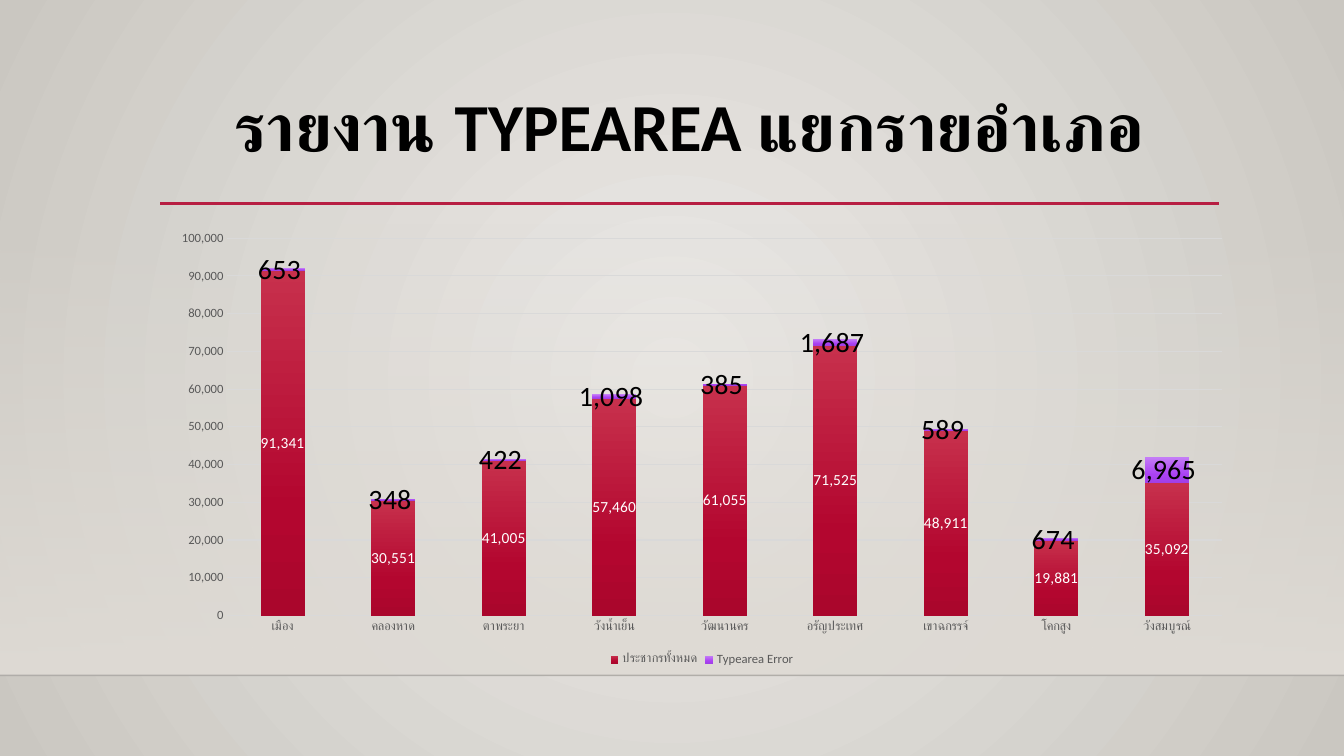
from lxml import etree
from pptx import Presentation
from pptx import util as u
from pptx.chart.data import CategoryChartData
from pptx.dml.color import RGBColor
from pptx.enum import chart as ch, shapes, text
from pptx.oxml.ns import qn

Pt = u.Pt
FONT = "Calibri"
WIDE, HIGH = 960, 540
TITLE = "รายงาน TYPEAREA แยกรายอำเภอ"
AREAS = ["เมือง", "คลองหาด", "ตาพระยา", "วังน้ำเย็น", "วัฒนานคร",
         "อรัญประเทศ", "เขาฉกรรจ์", "โคกสูง", "วังสมบูรณ์"]
# name, values, gradient stops, label size, label colour, label format
SERIES = [
    ("ประชากรทั้งหมด",
     [91341, 30551, 41005, 57460, 61055, 71525, 48911, 19881, 35092],
     [(0, "C7304C"), (69, "B3062F"), (100, "AA062C")],
     11, "FFFFFF", "#,##0"),
    ("Typearea Error",
     [653, 348, 422, 1098, 385, 1687, 589, 674, 6965],
     [(0, "C57FF7"), (69, "AA41F3"), (100, "A13FE5")],
     20, "000000", r"#,##0_);\(#,##0\)"),
]
LEFT, FLOOR = 114.5, 482.4


def rgb(code):
    return RGBColor.from_string(code)


def style(font, size, code, bold=False):
    font.name, font.size, font.bold = FONT, Pt(size), bold
    font.color.rgb = rgb(code)


def add(node, tag, **attrs):
    return etree.SubElement(node, qn(tag), {k: str(v) for k, v in attrs.items()})


def blend(fill, root, stops, radial=False):
    """Fill with a gradient; a stop is (percent, colour[, opacity percent])."""
    fill.solid()
    fill.fore_color.rgb = rgb(stops[0][1])
    solid = next(root.iter(qn("a:solidFill")))
    grad = etree.Element(qn("a:gradFill"), rotWithShape="1")
    marks = add(grad, "a:gsLst")
    for place, code, *alpha in stops:
        mark = add(marks, "a:gs", pos=place * 1000)
        tint = add(mark, "a:srgbClr", val=code)
        if alpha:
            add(tint, "a:alpha", val=alpha[0] * 1000)
    if radial:
        way = add(grad, "a:path", path="circle")
        add(way, "a:fillToRect", l=50000, t=50000, r=50000, b=50000)
    else:
        add(grad, "a:lin", ang=5400000, scaled=0)
    solid.getparent().replace(solid, grad)


def rule(slide, left, right, top, code, width, alpha=None):
    line = slide.shapes.add_connector(
        shapes.MSO_CONNECTOR.STRAIGHT, Pt(left), Pt(top), Pt(right), Pt(top))
    line.line.color.rgb = rgb(code)
    line.line.width = Pt(width)
    props = line.element.spPr
    add(props, "a:effectLst")
    if alpha:
        add(next(props.iter(qn("a:srgbClr"))), "a:alpha", val=alpha * 1000)


def draw_base(slide):
    blend(slide.background.fill, slide.element.find(".//" + qn("p:bgPr")),
          [(0, "ECEAE7"), (100, "CAC7C1")], radial=True)
    top = 159
    wall = slide.shapes.add_shape(
        shapes.MSO_SHAPE.RECTANGLE, 0, Pt(top), Pt(WIDE), Pt(FLOOR - top))
    wall.shadow.inherit = False
    wall.line.fill.background()
    blend(wall.fill, wall.element.spPr, [(0, "DFDBD5", 0), (100, "DFDBD5", 100)])
    rule(slide, 0, WIDE, FLOOR, "000001", 1, 20)
    rule(slide, LEFT, 871, 145.4, "B71E42", 2.5)


def draw_title(slide):
    title = slide.shapes.title
    title.left, title.top, title.width, title.height = map(Pt, (LEFT, 63.4, 756, 82.8))
    frame = title.text_frame
    frame.text = TITLE
    frame.word_wrap = True
    frame.vertical_anchor = text.MSO_ANCHOR.TOP
    para = frame.paragraphs[0]
    para.alignment = text.PP_ALIGN.CENTER
    para.line_spacing = 0.9
    style(para.runs[0].font, 48, "000000", True)


def draw_chart(slide):
    data = CategoryChartData(number_format="#,##0")
    data.categories = AREAS
    for name, values, *_ in SERIES:
        data.add_series(name, values)
    chart = slide.shapes.add_chart(
        ch.XL_CHART_TYPE.COLUMN_STACKED, Pt(LEFT), Pt(158.4), Pt(774), Pt(321), data).chart
    style(chart.font, 10, "000000")
    chart.has_title = False
    chart.has_legend = True
    chart.legend.position = ch.XL_LEGEND_POSITION.BOTTOM
    chart.legend.include_in_layout = False
    style(chart.legend.font, 9, "595959")

    cat, val = chart.category_axis, chart.value_axis
    for axis in (cat, val):
        axis.major_tick_mark = axis.minor_tick_mark = ch.XL_TICK_MARK.NONE
        style(axis.tick_labels.font, 9, "595959")
    val.tick_labels.number_format = "#,##0"
    val.tick_labels.number_format_is_linked = False
    val.format.line.fill.background()
    for line, width in ((cat.format.line, 1), (val.major_gridlines.format.line, 0.75)):
        line.color.rgb = rgb("D9D9D9")
        line.width = Pt(width)

    plot = chart.plots[0]
    plot.gap_width, plot.overlap = 150, 100
    plot.vary_by_categories = False
    for bars, (_, _, stops, size, code, form) in zip(plot.series, SERIES):
        fill = bars.format.fill
        blend(fill, bars.format.element if hasattr(bars.format, "element")
              else bars._element.spPr, stops)
        labels = bars.data_labels
        labels.show_value = True
        labels.position = ch.XL_LABEL_POSITION.CENTER
        labels.number_format = form
        labels.number_format_is_linked = False
        style(labels.font, size, code)


def main():
    deck = Presentation()
    deck.slide_width, deck.slide_height = Pt(WIDE), Pt(HIGH)
    slide = deck.slides.add_slide(deck.slide_layouts[5])
    draw_base(slide)
    draw_title(slide)
    draw_chart(slide)
    deck.save("out.pptx")


if __name__ == "__main__":
    main()
